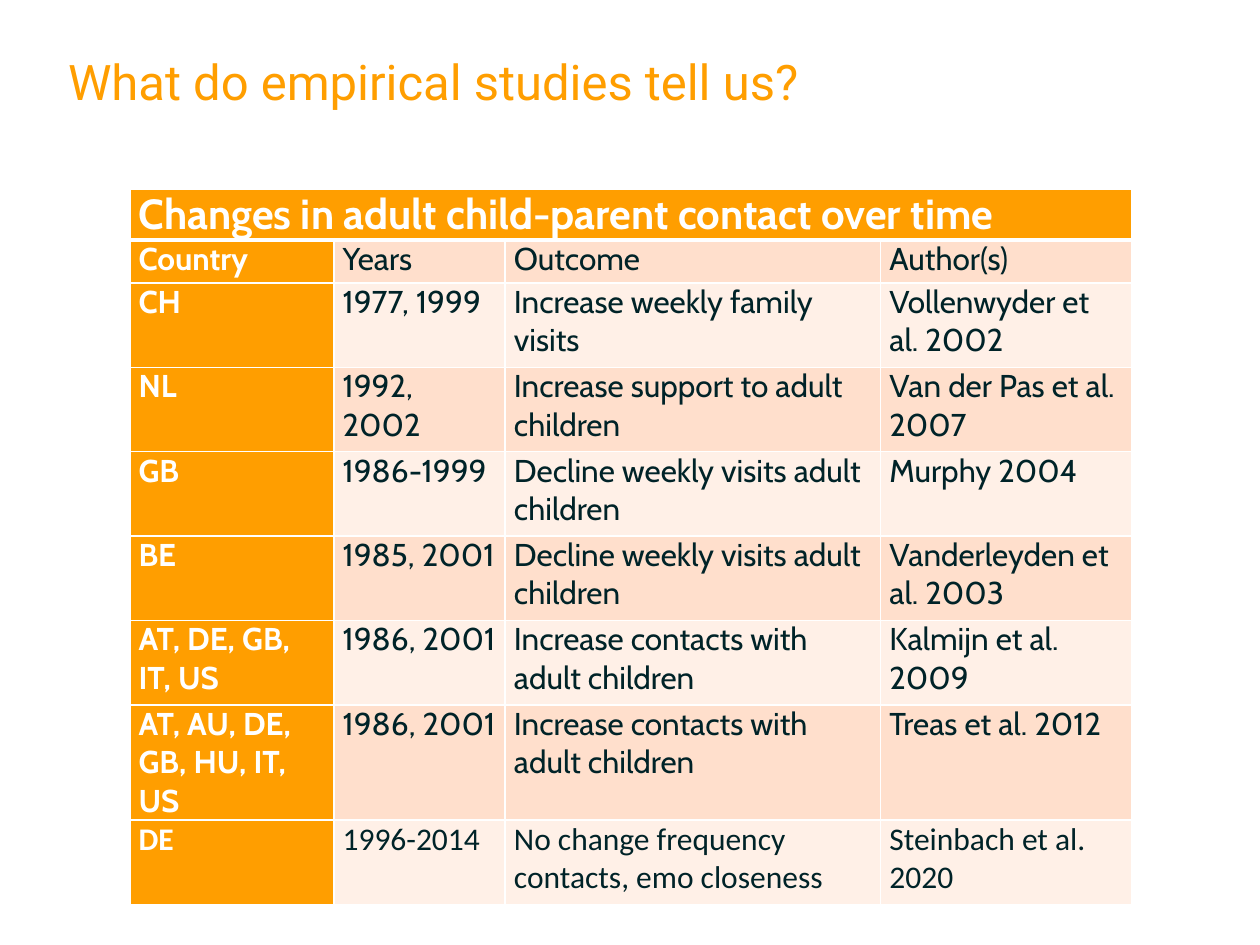
from dataclasses import dataclass

from lxml.etree import SubElement
from pptx import Presentation
from pptx.dml.color import RGBColor as RGB
from pptx.enum.text import MSO_ANCHOR as Anchor, MSO_AUTO_SIZE as AutoSize, PP_ALIGN as Align
from pptx.oxml.ns import qn
from pptx.util import Inches, Pt


@dataclass(frozen=True)
class Theme:
    accent: str = "FF9E00"
    dark: str = "002328"
    white: str = "FFFFFF"
    bands: tuple = ("FFDFCC", "FFF0E7")
    title_font: str = "Roboto"
    table_font: str = "Cabin"
    alt_font: str = "Calibri"
    title_size: int = 28
    heading_size: int = 24
    body_size: int = 18
    thin: int = 1
    thick: int = 3


class SlideBuilder:
    def __init__(self, prs, theme):
        self.theme = theme
        self.slide = prs.slides.add_slide(prs.slide_layouts[5])

    def add_run(self, p, text, font, size, color, bold=False):
        r = p.add_run()
        r.text = text
        r.font.name, r.font.size, r.font.bold = font, Pt(size), bold
        r.font.color.rgb = RGB.from_string(color)

    def title(self, text, left, top, width, height):
        t, sp = self.theme, self.slide.shapes.title
        sp.left, sp.top, sp.width, sp.height = map(Inches, (left, top, width, height))
        tf = sp.text_frame
        tf.margin_left = tf.margin_right = tf.margin_top = tf.margin_bottom = 0
        tf.word_wrap, tf.auto_size = True, AutoSize.NONE
        tf.vertical_anchor = Anchor.TOP
        p = tf.paragraphs[0]
        p.alignment, p.line_spacing = Align.LEFT, Pt(32)
        self.add_run(p, text, t.title_font, t.title_size, t.accent)

    def borders(self, cell, **widths):
        # Border elements must come before the fill
        tcPr = cell._tc.get_or_add_tcPr()
        for i, side in enumerate("LRTB"):
            width = widths.get(side, self.theme.thin)
            ln = SubElement(tcPr, qn(f"a:ln{side}"), w=str(Pt(width)))
            fill = SubElement(ln, qn("a:solidFill"))
            SubElement(fill, qn("a:srgbClr"), val=self.theme.white)
            tcPr.insert(i, ln)

    def cell(self, cell, fill, text="", **style):
        cell.margin_left = cell.margin_right = Inches(0.07)
        cell.margin_top = cell.margin_bottom = 0
        cell.fill.solid()
        cell.fill.fore_color.rgb = RGB.from_string(fill)
        if text:
            self.add_run(cell.text_frame.paragraphs[0], text, **style)

    def table(self, heading, rows, left, top, col_widths, row_heights):
        t = self.theme
        frame = self.slide.shapes.add_table(
            len(row_heights), len(col_widths), Inches(left), Inches(top),
            Inches(sum(col_widths)), Inches(sum(row_heights)))
        table = frame.table
        for col, width in zip(table.columns, col_widths):
            col.width = Inches(width)
        for row, height in zip(table.rows, row_heights):
            row.height = Inches(height)

        # Heading across all columns
        table.cell(0, 0).merge(table.cell(0, len(col_widths) - 1))
        for c in range(len(col_widths)):
            cell = table.cell(0, c)
            self.cell(cell, t.accent, "" if c else heading, font=t.table_font,
                      size=t.heading_size, color=t.white, bold=True)
            self.borders(cell, B=t.thick)

        # Banded rows with an accented first column
        for i, values in enumerate(rows):
            font = t.alt_font if i == len(rows) - 1 else t.table_font
            for c, text in enumerate(values):
                cell, first = table.cell(i + 1, c), c == 0
                self.cell(cell, t.accent if first else t.bands[i % 2], text,
                          font=font, size=t.body_size,
                          color=t.white if first else t.dark, bold=first)
                self.borders(cell, T=t.thin if i else t.thick)


STUDIES = [
    ("Country", "Years", "Outcome", "Author(s)"),
    ("CH", "1977, 1999", "Increase weekly family visits", "Vollenwyder et al. 2002"),
    ("NL", "1992, 2002", "Increase support to adult children", "Van der Pas et al. 2007"),
    ("GB", "1986-1999", "Decline weekly visits adult children", "Murphy 2004"),
    ("BE", "1985, 2001", "Decline weekly visits adult children", "Vanderleyden et al. 2003"),
    ("AT, DE, GB, IT, US", "1986, 2001", "Increase contacts with adult children",
     "Kalmijn et al. 2009"),
    ("AT, AU, DE, GB, HU, IT, US", "1986, 2001", "Increase contacts with adult children",
     "Treas et al. 2012"),
    ("DE", "1996-2014", "No change frequency contacts, emo closeness",
     "Steinbach et al. 2020"),
]


def main():
    prs = Presentation()
    prs.slide_width, prs.slide_height = Inches(10), Inches(7.5)
    s = SlideBuilder(prs, Theme())
    s.title("What do empirical studies tell us?", 0.54, 0.43, 8.94, 0.91)
    s.table("Changes in adult child-parent contact over time", STUDIES, 1.03, 1.5,
            col_widths=[1.62, 1.36, 2.98, 1.99],
            row_heights=[0.4, 0.34] + [0.67] * 5 + [0.91, 0.67])
    prs.save("out.pptx")


if __name__ == "__main__":
    main()
